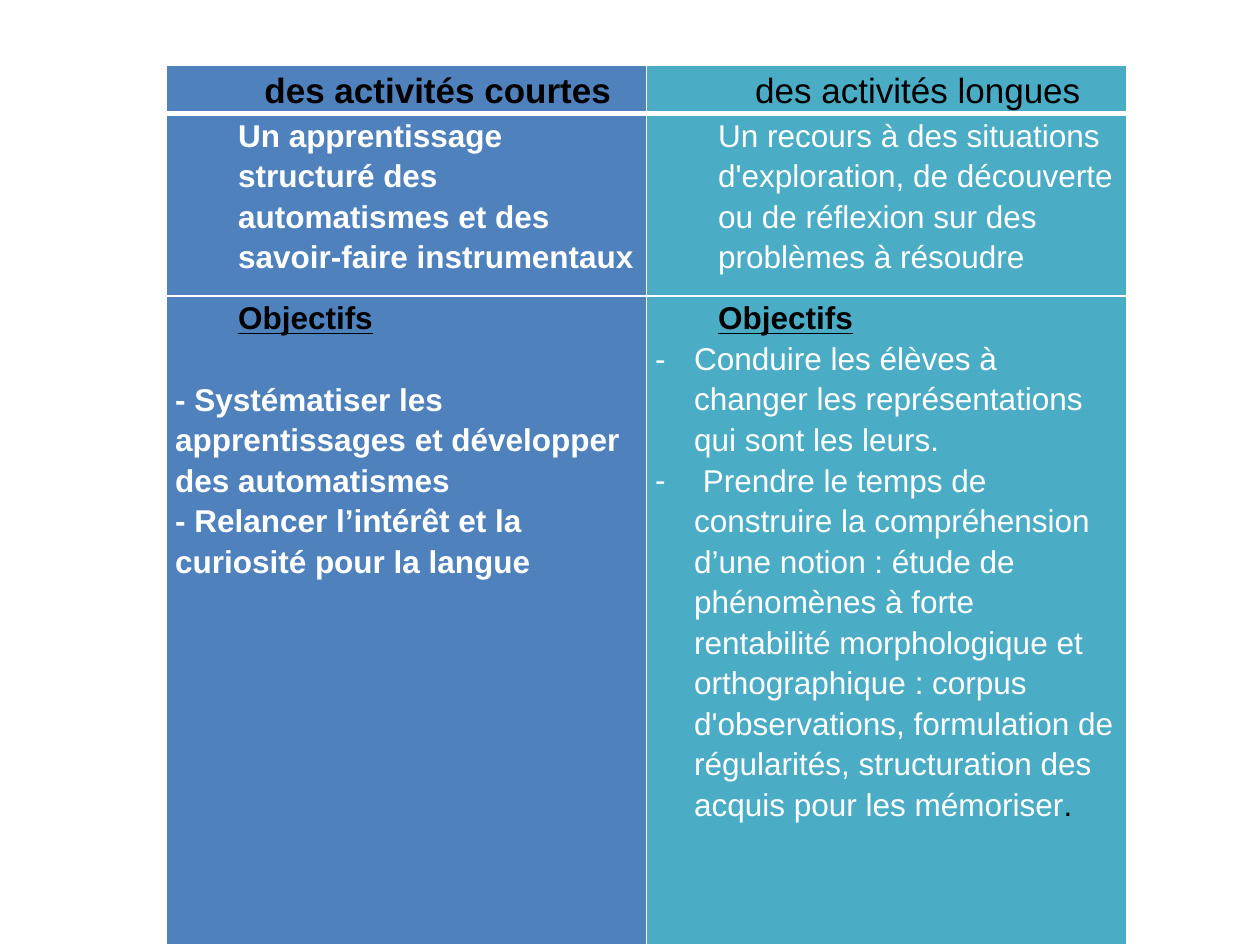
from dataclasses import dataclass

from lxml.etree import SubElement
from pptx import Presentation
from pptx.dml.color import RGBColor
from pptx.enum.text import PP_ALIGN
from pptx.oxml.ns import qn
from pptx.util import Inches, Pt

# Content: one list of rows, each cell a list of (style, text pieces)
ROWS = [
    [
        [("header", ["des activités courtes"])],
        [("header", ["des activités longues"])],
    ],
    [
        [("intro", ["Un apprentissage structuré des automatismes et des "
                    "savoir-faire instrumentaux"])],
        [("intro", ["Un recours à des situations d'exploration, de découverte "
                    "ou de réflexion sur des problèmes à résoudre"])],
    ],
    [
        [
            ("heading", ["Objectifs"]),
            ("first", ["- Systématiser les apprentissages et développer "
                       "des automatismes"]),
            ("plain", ["- Relancer l’intérêt et la curiosité pour la langue"]),
        ],
        [
            ("heading", ["Objectifs"]),
            ("bullet", ["Conduire les élèves à changer les représentations "
                        "qui sont les leurs."]),
            ("bullet", [" Prendre le temps de construire la compréhension "
                        "d’une notion : étude de phénomènes à forte "
                        "rentabilité morphologique et orthographique : corpus "
                        "d'observations, formulation de régularités, "
                        "structuration des acquis pour les mémoriser", "."]),
        ],
    ],
]
ROW_HEIGHTS = [0.38, 1.45, 5.15]
COLUMN_WIDTH = 3.81
LEFT, TOP = 1.32, 0.52


@dataclass(frozen=True)
class Theme:
    font: str = "Arial"
    header_size: int = 20
    body_size: int = 18
    dark: str = "000000"
    light: str = "FFFFFF"
    columns: tuple = ("4F81BD", "4BACC6")
    line_spacing: float = 1.15
    gap: float = 23.2
    thin: int = 1
    thick: int = 3


THEME = Theme()
INDENTS = {"header": (0.5, 0), "intro": (0.5, 0), "heading": (0.5, 0),
           "bullet": (0.31, -0.31)}


def set_borders(cell, bottom):
    """Draw the four cell borders; only the bottom width varies."""
    properties = cell._tc.get_or_add_tcPr()
    for side in "LRTB":
        width = bottom if side == "B" else THEME.thin
        line = SubElement(properties, qn(f"a:ln{side}"), w=str(Pt(width)))
        fill = SubElement(line, qn("a:solidFill"))
        SubElement(fill, qn("a:srgbClr"), val=THEME.light)


def write_paragraph(para, style, pieces, bold_column):
    para.line_spacing = THEME.line_spacing
    if style == "header":
        para.alignment = PP_ALIGN.CENTER
    if style == "first":
        para.space_before = Pt(THEME.gap)

    # Indent and dash bullet
    margin, indent = INDENTS.get(style, (0, 0))
    properties = para._p.get_or_add_pPr()
    properties.set("marL", str(Inches(margin)))
    properties.set("indent", str(Inches(indent)))
    if style == "bullet":
        SubElement(properties, qn("a:buFont"), typeface=THEME.font)
        SubElement(properties, qn("a:buChar"), char="-")

    # Text; a second piece is the dark full stop
    for number, piece in enumerate(pieces):
        span = para.add_run()
        span.text = piece
        font = span.font
        font.name = THEME.font
        font.size = Pt(THEME.header_size if style == "header" else THEME.body_size)
        font.bold = bold_column or style == "heading"
        font.underline = style == "heading"
        dark = style in ("header", "heading") or number > 0
        font.color.rgb = RGBColor.from_string(THEME.dark if dark else THEME.light)


def fill_cell(cell, paragraphs, row, column):
    cell.margin_left = cell.margin_right = Inches(0.07)
    cell.margin_top = cell.margin_bottom = 0
    set_borders(cell, THEME.thick if row == 0 else THEME.thin)
    cell.fill.solid()
    cell.fill.fore_color.rgb = RGBColor.from_string(THEME.columns[column])
    frame = cell.text_frame
    for number, (style, pieces) in enumerate(paragraphs):
        para = frame.add_paragraph() if number else frame.paragraphs[0]
        write_paragraph(para, style, pieces, bold_column=column == 0)


def main():
    deck = Presentation()
    deck.slide_width, deck.slide_height = Inches(10), Inches(7.5)
    page = deck.slides.add_slide(deck.slide_layouts[6])

    # Comparison table
    count = len(THEME.columns)
    table = page.shapes.add_table(
        len(ROWS), count, Inches(LEFT), Inches(TOP),
        Inches(COLUMN_WIDTH * count), Inches(sum(ROW_HEIGHTS))).table
    for column in table.columns:
        column.width = Inches(COLUMN_WIDTH)
    for row, (height, cells) in enumerate(zip(ROW_HEIGHTS, ROWS)):
        table.rows[row].height = Inches(height)
        for column, paragraphs in enumerate(cells):
            fill_cell(table.cell(row, column), paragraphs, row, column)

    deck.save("out.pptx")


if __name__ == "__main__":
    main()
